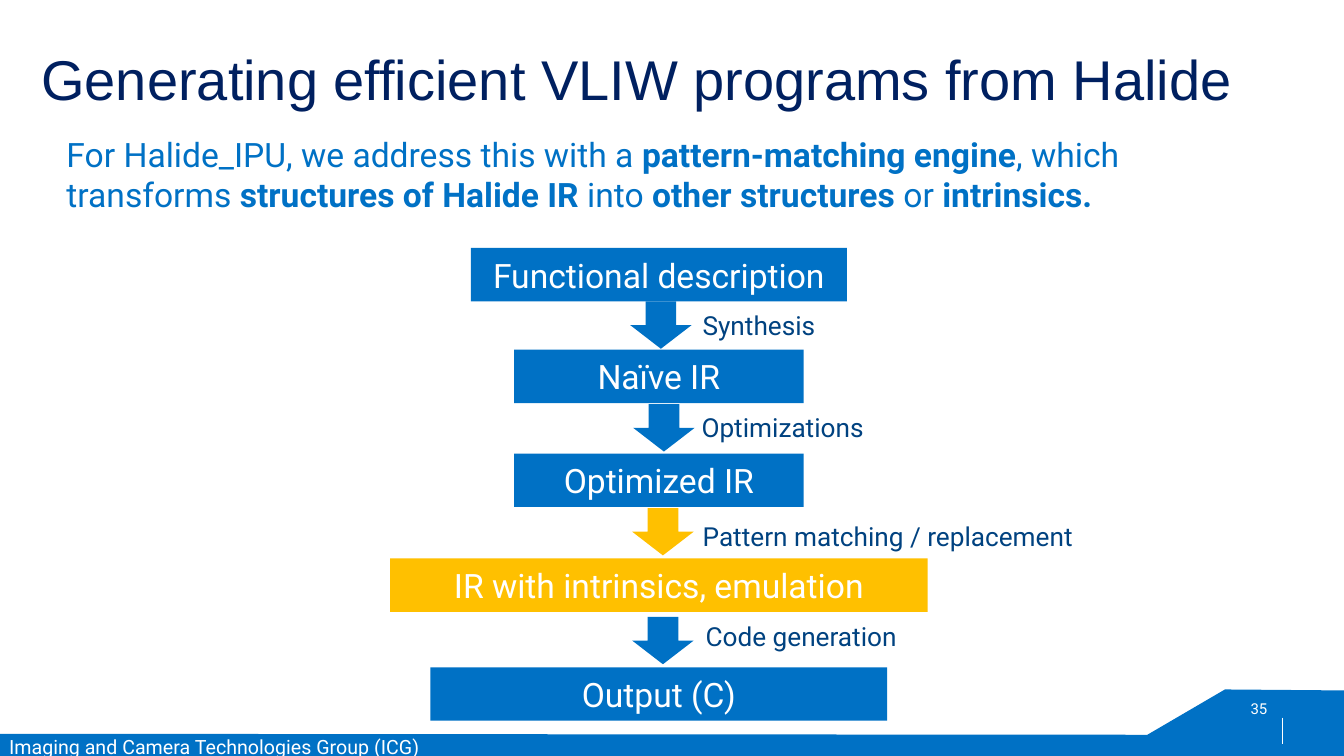
from pptx import Presentation
from pptx.dml.color import RGBColor
from pptx.enum.shapes import MSO_CONNECTOR, MSO_SHAPE
from pptx.enum.text import MSO_ANCHOR, PP_ALIGN
from pptx.oxml.ns import qn
from pptx.util import Inches, Pt
from lxml import etree

RECT, DOWN_ARROW = MSO_SHAPE.RECTANGLE, MSO_SHAPE.DOWN_ARROW
TOP, MIDDLE = MSO_ANCHOR.TOP, MSO_ANCHOR.MIDDLE
LEFT, CENTER, RIGHT = PP_ALIGN.LEFT, PP_ALIGN.CENTER, PP_ALIGN.RIGHT

BLUE = RGBColor(0x00, 0x71, 0xC5)
NAVY = RGBColor(0x00, 0x20, 0x60)
DARK_BLUE = RGBColor(0x00, 0x42, 0x80)
YELLOW = RGBColor(0xFF, 0xC0, 0x00)
WHITE = RGBColor(0xFF, 0xFF, 0xFF)


def write(sp, runs, size, color, font="Roboto", align=LEFT, anchor=TOP, inset=(0, 0)):
    """Fill a shape with one paragraph of (text, bold) runs."""
    tf = sp.text_frame
    tf.word_wrap = True
    tf.vertical_anchor = anchor
    tf.margin_left = tf.margin_right = Inches(inset[0])
    tf.margin_top = tf.margin_bottom = Inches(inset[1])
    p = tf.paragraphs[0]
    p.alignment = align
    for text, bold in runs:
        r = p.add_run()
        r.text = text
        r.font.name, r.font.size, r.font.bold = font, Pt(size), bold
        r.font.color.rgb = color


def paint(sp, color):
    """Give a shape a plain fill without outline or shadow."""
    sp.shadow.inherit = False
    sp.fill.solid()
    sp.fill.fore_color.rgb = color
    sp.line.fill.background()


prs = Presentation()
prs.slide_width, prs.slide_height = Inches(13.33), Inches(7.5)
s = prs.slides.add_slide(prs.slide_layouts[5])

# Footer band with raised corner
outline = [(13.33, 6.85), (12.15, 6.84), (11.38, 7.29), (0, 7.28), (0, 7.5), (13.33, 7.5)]
points = [(Inches(x), Inches(y)) for x, y in outline]
builder = s.shapes.build_freeform(*points[0])
builder.add_line_segments(points[1:], close=True)
paint(builder.convert_to_shape(), BLUE)

divider = s.shapes.add_connector(
    MSO_CONNECTOR.STRAIGHT, Inches(12.72), Inches(7.12), Inches(12.72), Inches(7.38))
divider.line.color.rgb = WHITE
divider.line.width = Pt(0.25)
etree.SubElement(divider._element.spPr, qn("a:effectLst"))

# Footer text and slide number
sp = s.shapes.add_textbox(Inches(0), Inches(7.28), Inches(6), Inches(0.26))
write(sp, [("Imaging and Camera Technologies Group (ICG)", False)], 14, WHITE,
      anchor=MIDDLE, inset=(0.09, 0))
sp = s.shapes.add_textbox(Inches(9.46), Inches(6.83), Inches(3.11), Inches(0.4))
write(sp, [("35", False)], 10.7, WHITE, align=RIGHT, anchor=MIDDLE)

# Title
title = s.shapes.title
title.left, title.top = Inches(0.41), Inches(0.44)
title.width, title.height = Inches(12), Inches(1.27)
write(title, [("Generating efficient VLIW programs from Halide", False)], 40, NAVY, font="Arial")

# Introduction
sp = s.shapes.add_textbox(Inches(0.66), Inches(1.33), Inches(12), Inches(1.02))
write(sp, [
    ("For Halide_IPU, we address this with a ", False),
    ("pattern-matching engine", True),
    (", which transforms ", False),
    ("structures of Halide IR ", True),
    ("into ", False),
    ("other structures ", True),
    ("or ", False),
    ("intrinsics.", True),
], 24, BLUE)

# Stages, all centred on one axis: text, top, width, colour
AXIS = 6.535
stages = [
    ("Functional description", 2.46, 3.73, BLUE),
    ("Naïve IR", 3.47, 2.87, BLUE),
    ("Optimized IR", 4.5, 2.87, BLUE),
    ("IR with intrinsics, emulation", 5.54, 5.33, YELLOW),
    ("Output (C)", 6.62, 4.53, BLUE),
]
for text, top, width, color in stages:
    sp = s.shapes.add_shape(
        RECT, Inches(AXIS - width / 2), Inches(top), Inches(width), Inches(0.53))
    paint(sp, color)
    write(sp, [(text, False)], 24, WHITE, align=CENTER, anchor=MIDDLE, inset=(0.1, 0.05))

# Steps: label, label left and top, label width, arrow left and top, colour
steps = [
    ("Synthesis", 6.87, 3.02, 2.5, 6.25, 2.99, BLUE),
    ("Optimizations", 6.86, 4.03, 2.5, 6.28, 4.01, BLUE),
    ("Pattern matching / replacement", 6.87, 5.11, 4.58, 6.27, 5.04, YELLOW),
    ("Code generation", 6.9, 6.1, 2.5, 6.27, 6.12, BLUE),
]
for text, left, top, width, arrow_left, arrow_top, color in steps:
    arrow = s.shapes.add_shape(
        DOWN_ARROW, Inches(arrow_left), Inches(arrow_top), Inches(0.61), Inches(0.47))
    paint(arrow, color)
    sp = s.shapes.add_textbox(Inches(left), Inches(top), Inches(width), Inches(0.42))
    write(sp, [(text, False)], 18.7, DARK_BLUE, inset=(0.1, 0.05))

prs.save("out.pptx")
